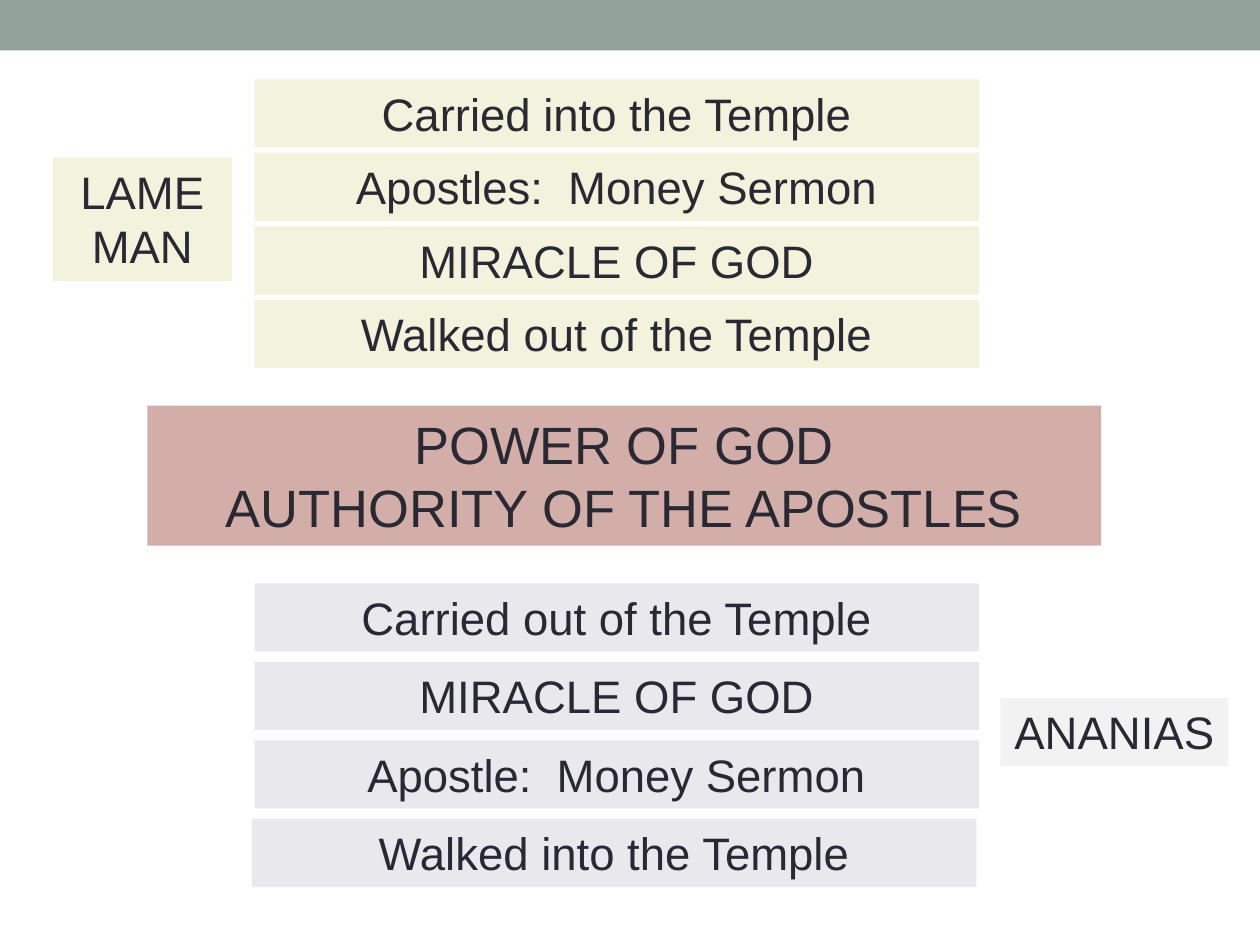
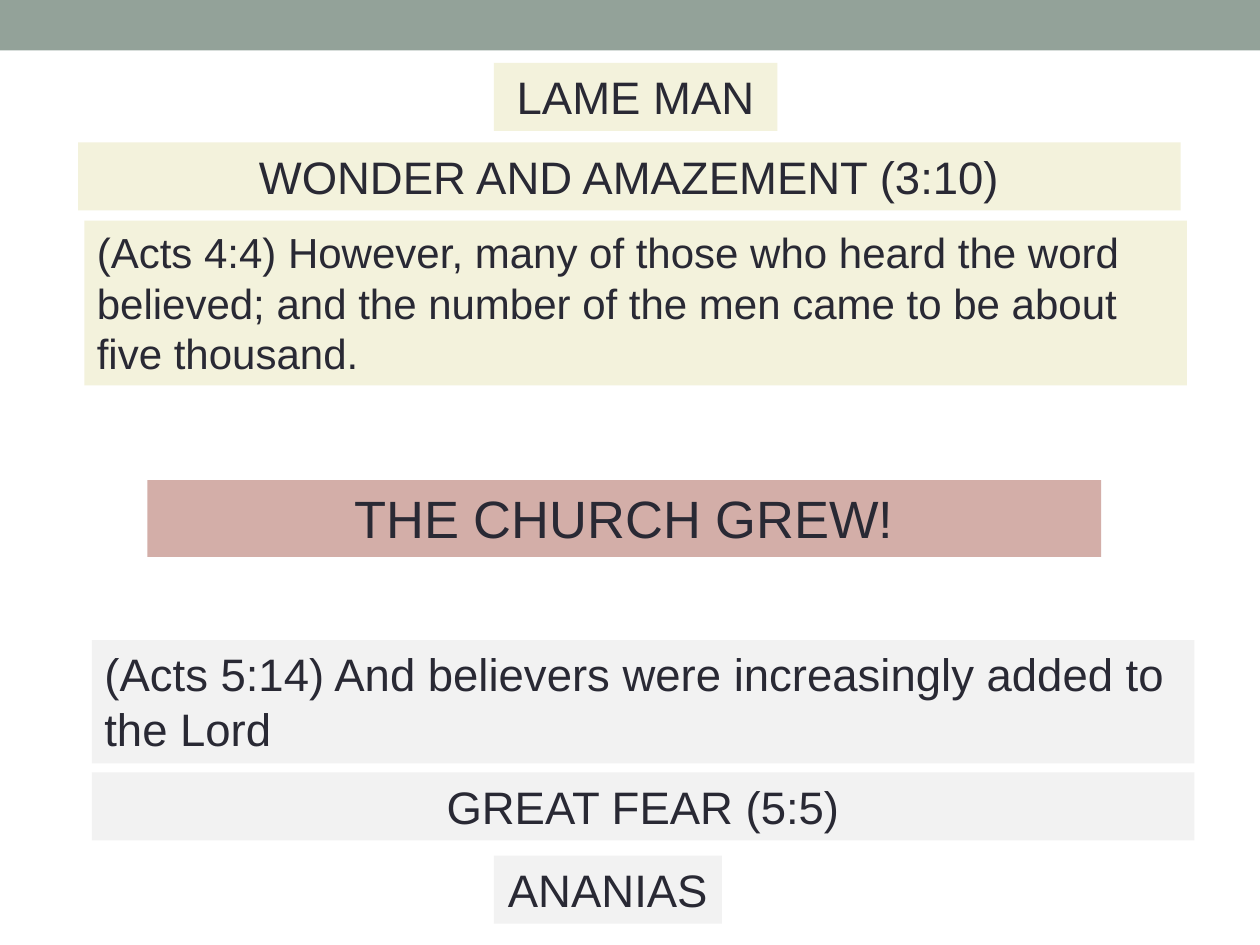
from dataclasses import dataclass

import pptx
import pptx.dml.color
import pptx.enum.shapes
import pptx.enum.text
import pptx.util

Inches = pptx.util.Inches
ALIGN = pptx.enum.text.PP_ALIGN


def rgb(code):
    return pptx.dml.color.RGBColor.from_string(code)


@dataclass(frozen=True)
class Theme:
    font: str = "Arial"
    ink: str = "292934"
    band: str = "93A299"
    cream: str = "F3F2DC"
    lilac: str = "E8E8ED"
    gray: str = "F2F2F2"
    rose: str = "D3AEA8"
    verse: int = 24
    body: int = 26
    headline: int = 30


class Deck:
    line_height = 0.54

    def __init__(self, theme):
        self.theme = theme
        self.prs = pptx.Presentation()
        self.prs.slide_width = Inches(10)
        self.prs.slide_height = Inches(7.5)
        self.s = None

    def slide(self):
        """Start a slide with the band across its top."""
        self.s = self.prs.slides.add_slide(self.prs.slide_layouts[6])
        sp = self.s.shapes.add_shape(
            pptx.enum.shapes.MSO_SHAPE.RECTANGLE, 0, 0, self.prs.slide_width, Inches(0.4))
        sp.shadow.inherit = False
        sp.fill.solid()
        sp.fill.fore_color.rgb = rgb(self.theme.band)
        sp.line.fill.background()

    def box(self, text, left, top, width, fill, height=line_height, size=None, align=ALIGN.CENTER):
        sp = self.s.shapes.add_textbox(Inches(left), Inches(top), Inches(width), Inches(height))
        sp.fill.solid()
        sp.fill.fore_color.rgb = rgb(fill)
        tf = sp.text_frame
        tf.word_wrap = True
        tf.auto_size = pptx.enum.text.MSO_AUTO_SIZE.SHAPE_TO_FIT_TEXT
        tf.text = text
        for p in tf.paragraphs:
            p.alignment = align
            p.font.name = self.theme.font
            p.font.size = pptx.util.Pt(size or self.theme.body)
            p.font.color.rgb = rgb(self.theme.ink)
        return sp

    def stack(self, texts, first, last, fill):
        """Spread one-line boxes evenly from the first top to the last."""
        step = (last - first) / (len(texts) - 1)
        return [self.box(text, 2.02, first + i * step, 5.75, fill)
                for i, text in enumerate(texts)]

    def headline(self, text, top, height):
        self.box(text, 1.17, top, 7.57, self.theme.rose, height, self.theme.headline)

    def wide(self, text, left, top, fill, **style):
        self.box(text, left, top, 8.75, fill, **style)


def comparison_slide(deck):
    t = deck.theme
    deck.slide()
    deck.stack(["Carried into the Temple", "Apostles:  Money Sermon",
                "MIRACLE OF GOD", "Walked out of the Temple"], 0.63, 2.38, t.cream)
    ananias_rows = deck.stack(["Carried out of the Temple", "MIRACLE OF GOD",
                               "Apostle:  Money Sermon", "Walked into the Temple"],
                              4.63, 6.5, t.lilac)
    ananias_rows[-1].left = Inches(2)
    deck.headline("POWER OF GOD\nAUTHORITY OF THE APOSTLES", 3.22, 1.11)
    deck.box("LAME MAN", 0.42, 1.25, 1.42, t.cream, height=0.98)
    deck.box("ANANIAS", 7.94, 5.54, 1.81, t.gray)


def growth_slide(deck):
    t = deck.theme
    deck.slide()
    deck.box("LAME MAN", 3.92, 0.5, 2.25, t.cream)
    deck.wide("WONDER AND AMAZEMENT (3:10)", 0.62, 1.13, t.cream)
    deck.wide("(Acts 4:4) However, many of those who heard the word believed; "
              "and the number of the men came to be about five thousand.",
              0.67, 1.75, t.cream, height=1.31, size=t.verse, align=ALIGN.LEFT)
    deck.headline("THE CHURCH GREW!", 3.81, 0.61)
    deck.wide("(Acts 5:14) And believers were increasingly added to the Lord",
              0.73, 5.08, t.gray, height=0.98, align=ALIGN.LEFT)
    deck.wide("GREAT FEAR (5:5)", 0.73, 6.13, t.gray)
    deck.box("ANANIAS", 3.92, 6.79, 1.81, t.gray)


def main():
    deck = Deck(Theme())
    comparison_slide(deck)
    growth_slide(deck)
    deck.prs.save("out.pptx")


if __name__ == "__main__":
    main()
